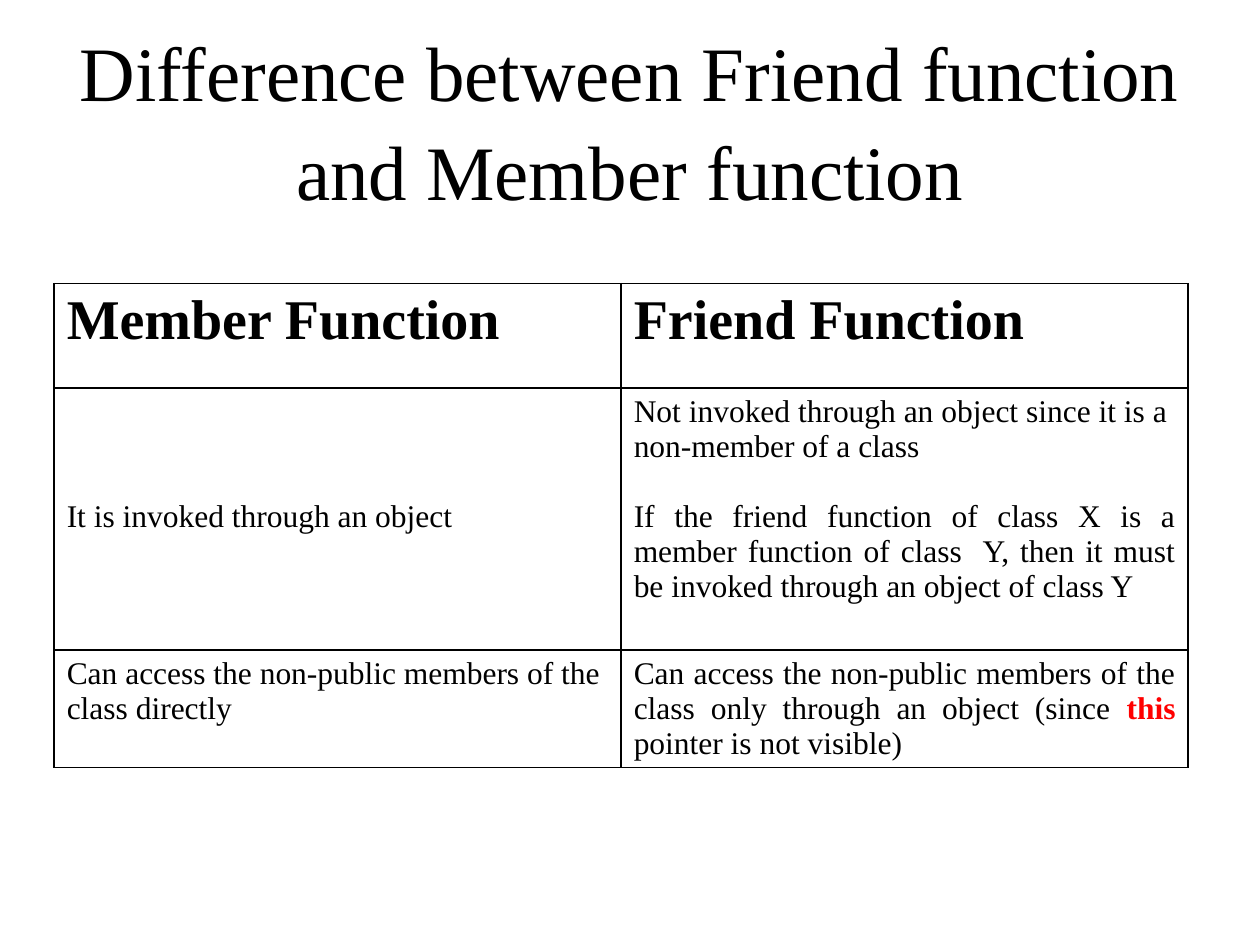
import pptx
import pptx.util
import pptx.dml.color
import pptx.enum.text
import pptx.oxml
import pptx.oxml.ns
from pptx.util import Inches

COLORS = {"ink": "000000", "accent": "FF0000", "paper": "FFFFFF"}
FONT = "Times New Roman"
ALIGN = pptx.enum.text.PP_ALIGN
ANCHOR = pptx.enum.text.MSO_ANCHOR

COLUMN_WIDTH = 4.5
ROW_HEIGHTS = [0.83, 2.08, 0.92]
BODY_SIZE = 18
BODY_LINE = 20

MEMBER_ACCESS = "Can access the non-public members of the class directly"
FRIEND_CALL = "Not invoked through an object since it is a non-member of a class"
FRIEND_OF_CLASS = (
    "If the friend function of class X is a member function of class  Y, "
    "then it must be invoked through an object of class Y"
)
FRIEND_ACCESS = "Can access the non-public members of the class only through an object (since "


def add_span(para, text, size, bold=False, color="ink"):
    span = para.add_run()
    span.text = text
    span.font.name = FONT
    span.font.size = pptx.util.Pt(size)
    span.font.bold = bold
    span.font.color.rgb = pptx.dml.color.RGBColor.from_string(COLORS[color])


def add_title(page, text):
    title = page.shapes.title
    title.left, title.top = Inches(0.5), Inches(0.3)
    title.width, title.height = Inches(9), Inches(1.25)
    frame = title.text_frame
    frame.word_wrap = True
    frame.auto_size = pptx.enum.text.MSO_AUTO_SIZE.NONE
    frame.vertical_anchor = ANCHOR.MIDDLE
    para = frame.paragraphs[0]
    para.alignment = ALIGN.CENTER
    para.line_spacing = 1.08
    add_span(para, text, 44)


def add_borders(cell):
    properties = cell._tc.get_or_add_tcPr()
    for index, side in enumerate(["lnL", "lnR", "lnT", "lnB"]):
        line = pptx.oxml.parse_xml(
            f'<a:{side} {pptx.oxml.ns.nsdecls("a")} w="12700"><a:solidFill>'
            f'<a:srgbClr val="{COLORS["ink"]}"/></a:solidFill></a:{side}>'
        )
        properties.insert(index, line)


def add_table(page):
    rows = len(ROW_HEIGHTS)
    frame = page.shapes.add_table(
        rows, 2, Inches(0.43), Inches(2.25),
        Inches(2 * COLUMN_WIDTH), Inches(sum(ROW_HEIGHTS)),
    )
    table = frame.table
    table.first_row = False
    table.horz_banding = False
    for column in table.columns:
        column.width = Inches(COLUMN_WIDTH)
    for row, height in zip(table.rows, ROW_HEIGHTS):
        row.height = Inches(height)
    for cell in table.iter_cells():
        cell.fill.solid()
        cell.fill.fore_color.rgb = pptx.dml.color.RGBColor.from_string(COLORS["paper"])
        cell.vertical_anchor = ANCHOR.TOP
        add_borders(cell)
    return table


def next_paragraph(cell, alignment=ALIGN.LEFT):
    frame = cell.text_frame
    para = frame.add_paragraph() if frame.text else frame.paragraphs[0]
    para.alignment = alignment
    return para


def fill_table(table):
    for column, heading in enumerate(["Member Function", "Friend Function"]):
        add_span(next_paragraph(table.cell(0, column)), heading, 32, bold=True)

    member_call = table.cell(1, 0)
    member_call.margin_top = Inches(0.05) + pptx.util.Pt(3 * BODY_LINE)
    add_span(next_paragraph(member_call), "It is invoked through an object", BODY_SIZE)

    friend_call = table.cell(1, 1)
    add_span(next_paragraph(friend_call), FRIEND_CALL, BODY_SIZE)
    para = next_paragraph(friend_call, ALIGN.JUSTIFY)
    para.space_before = pptx.util.Pt(BODY_LINE)
    add_span(para, FRIEND_OF_CLASS, BODY_SIZE)

    add_span(next_paragraph(table.cell(2, 0)), MEMBER_ACCESS, BODY_SIZE)
    para = next_paragraph(table.cell(2, 1), ALIGN.JUSTIFY)
    add_span(para, FRIEND_ACCESS, BODY_SIZE)
    add_span(para, "this ", BODY_SIZE, bold=True, color="accent")
    add_span(para, "pointer is not visible)", BODY_SIZE)


def main():
    deck = pptx.Presentation()
    deck.slide_width, deck.slide_height = Inches(10), Inches(7.5)
    page = deck.slides.add_slide(deck.slide_layouts.get_by_name("Title Only"))
    add_title(page, "Difference between Friend function and Member function")
    fill_table(add_table(page))
    deck.save("out.pptx")


if __name__ == "__main__":
    main()
